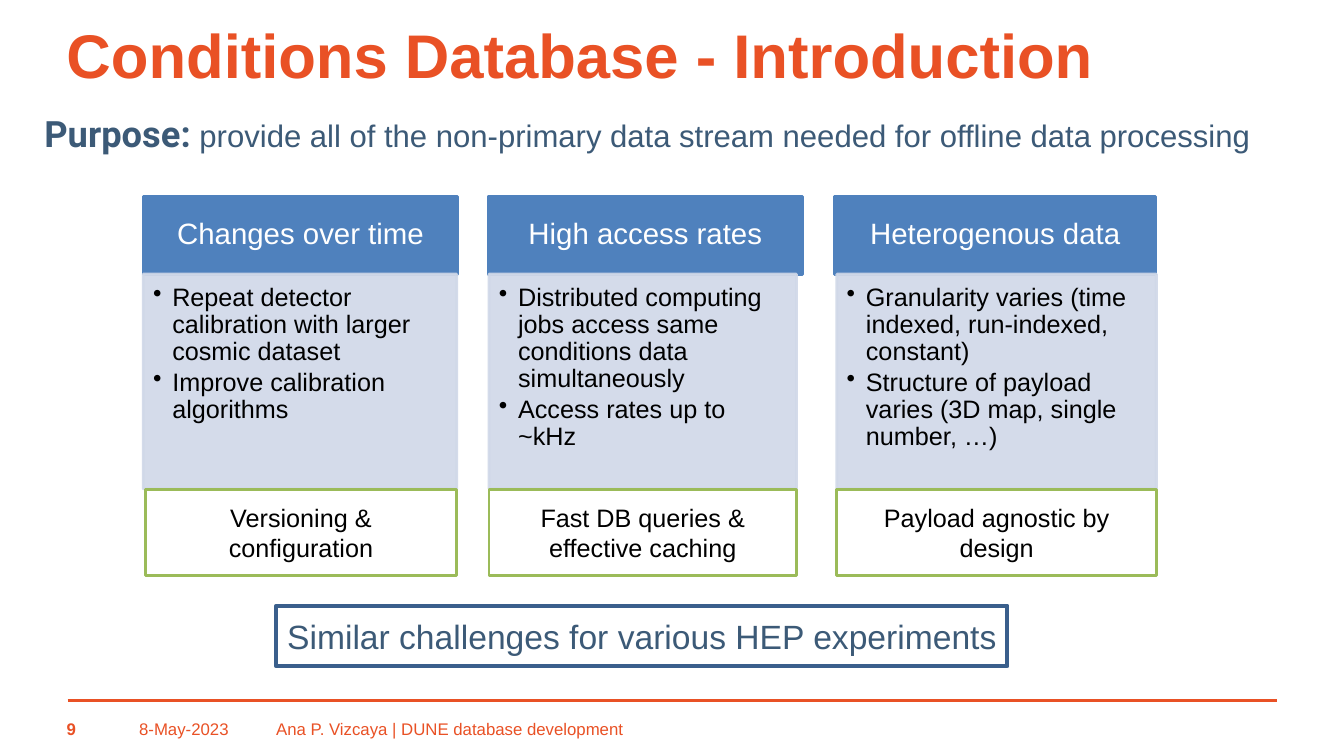
import pptx
import pptx.util
import pptx.dml.color
import pptx.enum.shapes
import pptx.enum.text
import pptx.oxml
import pptx.oxml.ns
from lxml import etree

Inches, Pt = pptx.util.Inches, pptx.util.Pt
RGBColor = pptx.dml.color.RGBColor
ALIGN, ANCHOR = pptx.enum.text.PP_ALIGN, pptx.enum.text.MSO_ANCHOR
qn = pptx.oxml.ns.qn

ORANGE = RGBColor(0xE9, 0x51, 0x25)
SLATE = RGBColor(0x3C, 0x5A, 0x77)
NAVY = RGBColor(0x3A, 0x5F, 0x8C)
BLUE = RGBColor(0x4F, 0x81, 0xBD)
PALE = RGBColor(0xD0, 0xD8, 0xE8)
GREEN = RGBColor(0x9B, 0xBB, 0x59)
BLACK = RGBColor(0, 0, 0)
WHITE = RGBColor(255, 255, 255)

prs = pptx.Presentation()
prs.slide_width, prs.slide_height = Inches(13.33), Inches(7.5)
s = prs.slides.add_slide(prs.slide_layouts[6])


def write(sp, text, size, color, bold=False, align=ALIGN.LEFT,
          anchor=ANCHOR.TOP, insets=(0, 0, 0, 0)):
    tf = sp.text_frame
    tf.word_wrap = True
    tf.vertical_anchor = anchor
    tf.margin_left, tf.margin_top, tf.margin_right, tf.margin_bottom = map(Inches, insets)
    tf.text = text
    for p in tf.paragraphs:
        p.alignment = align
        for r in p.runs:
            r.font.name, r.font.size, r.font.bold = "Arial", Pt(size), bold
            r.font.color.rgb = color
    return tf


def add_box(x, y, w, h, fill, line, width=2):
    sp = s.shapes.add_shape(pptx.enum.shapes.MSO_SHAPE.RECTANGLE,
                            Inches(x), Inches(y), Inches(w), Inches(h))
    sp.shadow.inherit = False
    if fill is None:
        sp.fill.background()
    else:
        sp.fill.solid()
        sp.fill.fore_color.rgb = fill
    sp.line.color.rgb = line
    sp.line.width = Pt(width)
    return sp


# Title
sp = s.shapes.add_textbox(Inches(0.66), Inches(0.17), Inches(12), Inches(0.71))
write(sp, "Conditions Database - Introduction", 44, ORANGE, bold=True)

# Purpose statement
sp = s.shapes.add_textbox(Inches(0.44), Inches(1.05), Inches(12.96), Inches(0.81))
tf = write(sp, "Purpose:", 25.9, SLATE, bold=True, align=ALIGN.JUSTIFY,
           insets=(0, 0.05, 0, 0.05))
p = tf.paragraphs[0]
p.runs[0].font.name = "Roboto"
r = p.add_run()
r.text = " provide all of the non-primary data stream needed for offline data processing"
r.font.name, r.font.size, r.font.bold = "Arial", Pt(22.2), False
r.font.color.rgb = SLATE

# Columns: header (left, width), body (left, width), solution (left, width)
columns = [
    ((1.42, 3.12), (1.42, 3.11), (1.44, 3.09), "Changes over time",
     ["Repeat detector calibration with larger cosmic dataset",
      "Improve calibration algorithms"],
     "Versioning & configuration"),
    ((4.84, 3.12), (4.85, 3.05), (4.85, 3.05), "High access rates",
     ["Distributed computing jobs access same conditions data simultaneously",
      "Access rates up to ~kHz"],
     "Fast DB queries & effective caching"),
    ((8.28, 3.18), (8.3, 3.17), (8.3, 3.17), "Heterogenous data",
     ["Granularity varies (time indexed, run-indexed, constant)",
      "Structure of payload varies (3D map, single number, …)"],
     "Payload agnostic by design"),
]
for head, body, solution, heading, points, answer in columns:
    sp = add_box(head[0], 1.95, head[1], 0.77, BLUE, BLUE)
    tf = write(sp, heading, 21, WHITE, align=ALIGN.CENTER, anchor=ANCHOR.MIDDLE,
               insets=(0.18, 0.1, 0.18, 0.1))
    tf.paragraphs[0].line_spacing = 0.9

    sp = add_box(body[0], 2.72, body[1], 2.13, PALE, PALE)
    for color in sp._element.spPr.iter(qn("a:srgbClr")):
        etree.SubElement(color, qn("a:alpha"), val="90000")
    tf = write(sp, "\n".join(points), 18, BLACK, insets=(0.1, 0.1, 0.14, 0.16))
    for p in tf.paragraphs:
        pPr = p._p.get_or_add_pPr()
        pPr.set("marL", str(Inches(0.19)))
        pPr.set("indent", str(-Inches(0.19)))
        etree.SubElement(pPr, qn("a:buChar"), char="•")
        p.line_spacing = 0.9
        p.space_after = Pt(2.7)

    sp = add_box(solution[0], 4.86, solution[1], 0.85, None, GREEN)
    write(sp, answer, 18, BLACK, align=ALIGN.CENTER, anchor=ANCHOR.MIDDLE,
          insets=(0.1, 0.05, 0.1, 0.05))

# Conclusion
sp = add_box(2.74, 6.01, 7.25, 0.6, None, NAVY, 3)
write(sp, "Similar challenges for various HEP experiments", 24, SLATE,
      align=ALIGN.CENTER, anchor=ANCHOR.MIDDLE, insets=(0.1, 0.05, 0.1, 0.05))

# Footer rule and texts
rule = s.shapes.add_connector(pptx.enum.shapes.MSO_CONNECTOR.STRAIGHT,
                              Inches(0.67), Inches(6.95), Inches(12.67), Inches(6.95))
rule.line.color.rgb = ORANGE
rule.line.width = Pt(2)
etree.SubElement(rule._element.spPr, qn("a:effectLst"))
for x, w, text, bold in [
    (0.66, 0.62, "9", True),
    (1.38, 1.46, "8-May-2023", False),
    (2.74, 6.34, "Ana P. Vizcaya | DUNE database development", False),
]:
    sp = s.shapes.add_textbox(Inches(x), Inches(7.16), Inches(w), Inches(0.17))
    write(sp, text, 12, ORANGE, bold=bold, anchor=ANCHOR.BOTTOM)

prs.save("out.pptx")
